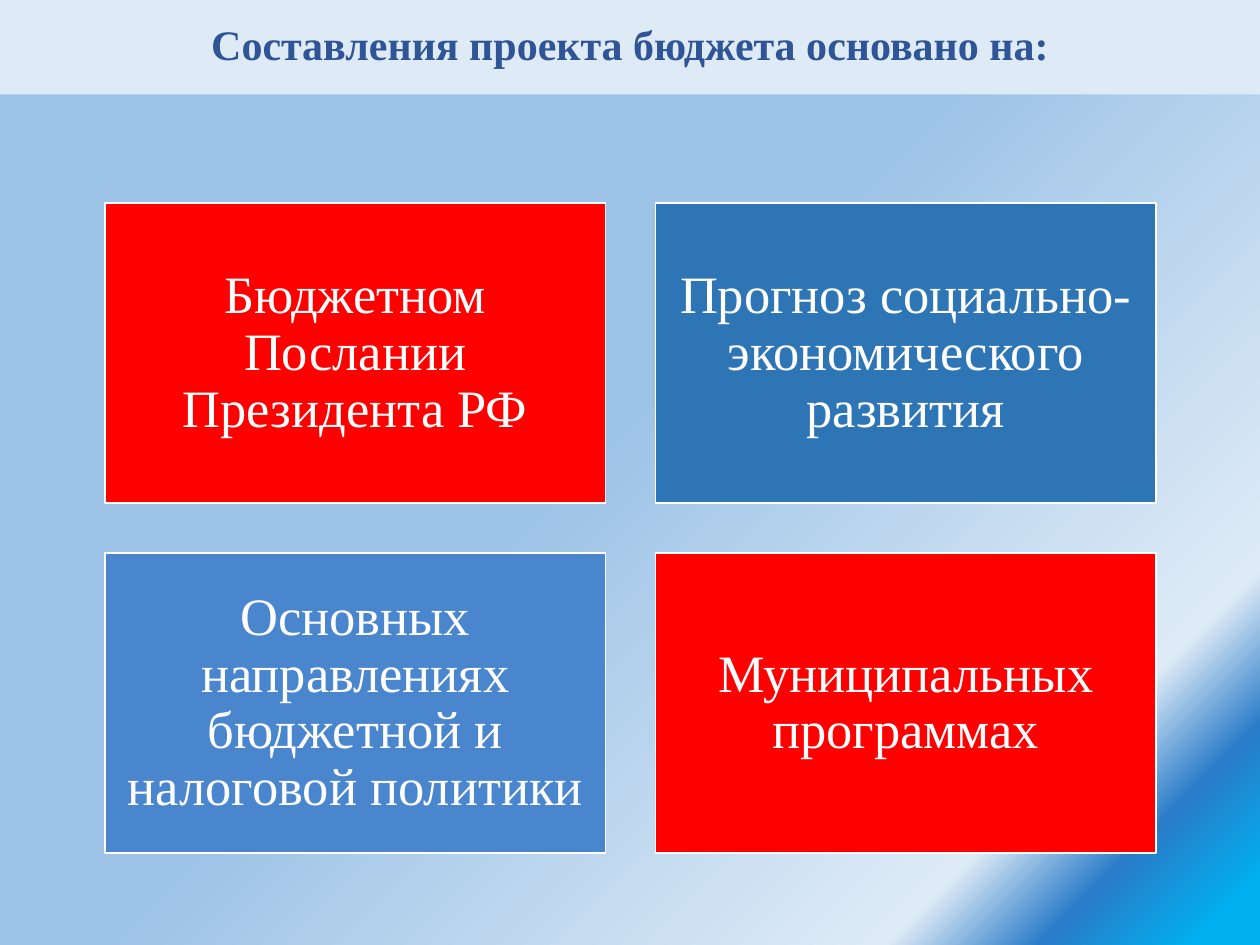
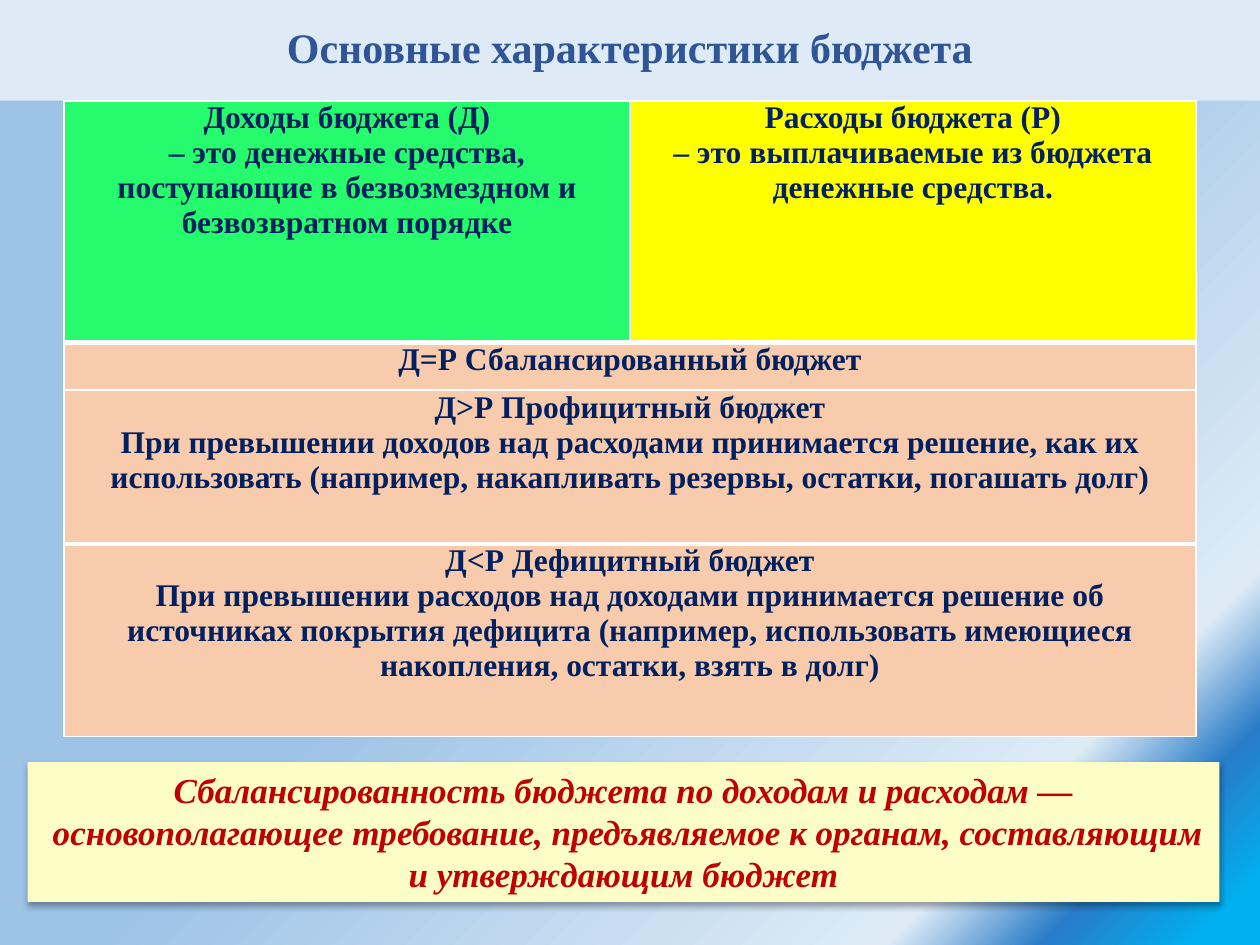
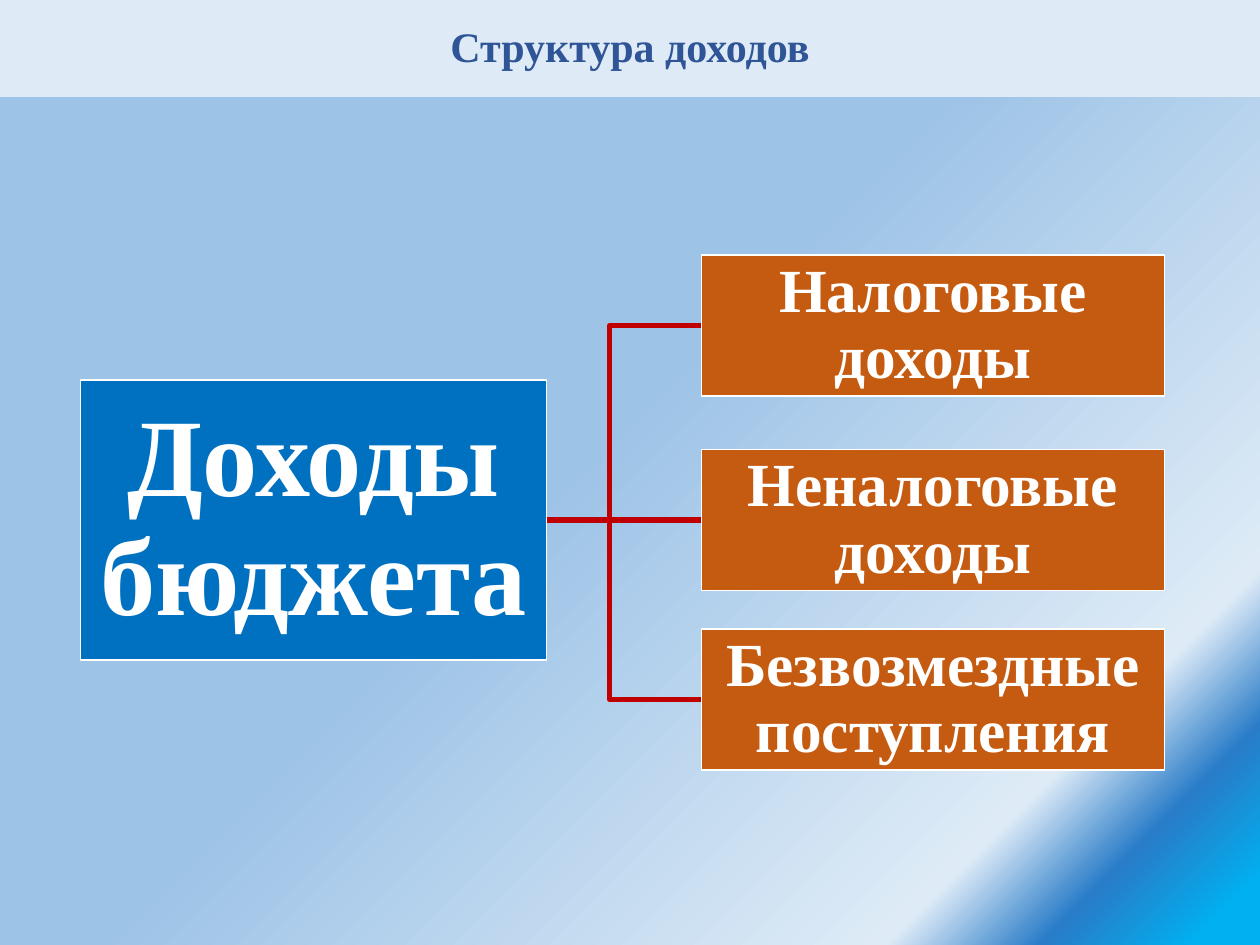
"""Build three slides on how a budget is drafted, balanced and filled."""
import dataclasses
import typing

import pptx
import pptx.dml.color
import pptx.enum.shapes
import pptx.enum.text
import pptx.oxml
import pptx.oxml.ns
import pptx.presentation
import pptx.shapes.autoshape
import pptx.slide
import pptx.table
import pptx.text.text
import pptx.util

Pt = pptx.util.Pt
RGBColor = pptx.dml.color.RGBColor
ANCHOR = pptx.enum.text.MSO_ANCHOR
RECTANGLE = pptx.enum.shapes.MSO_SHAPE.RECTANGLE

FONT = "Times New Roman"
WHITE = RGBColor(0xFF, 0xFF, 0xFF)
BLACK = RGBColor(0x00, 0x00, 0x00)
RED = RGBColor(0xFF, 0x00, 0x00)
DARK_RED = RGBColor(0xC0, 0x00, 0x00)
SKY = RGBColor(0x00, 0xB0, 0xF0)
OCEAN = RGBColor(0x29, 0x7C, 0xC8)
PALE_BLUE = RGBColor(0xDE, 0xEB, 0xF7)
SOFT_BLUE = RGBColor(0x9D, 0xC3, 0xE6)
TITLE_BLUE = RGBColor(0x2F, 0x55, 0x97)
FORECAST_BLUE = RGBColor(0x2E, 0x75, 0xB6)
POLICY_BLUE = RGBColor(0x4A, 0x86, 0xCE)
ROOT_BLUE = RGBColor(0x00, 0x70, 0xC0)
NAVY = RGBColor(0x00, 0x20, 0x60)
GREEN = RGBColor(0x26, 0xFA, 0x6D)
YELLOW = RGBColor(0xFF, 0xFF, 0x00)
PEACH = RGBColor(0xF8, 0xCB, 0xAD)
CREAM = RGBColor(0xFD, 0xFD, 0xC7)
ORANGE = RGBColor(0xC5, 0x5A, 0x11)

SLIDE_WIDTH, SLIDE_HEIGHT = 720, 540
BACKDROP = [(3, SKY), (10, OCEAN), (17, PALE_BLUE), (53, SOFT_BLUE), (96, SOFT_BLUE)]


@dataclasses.dataclass(frozen=True)
class TextStyle:
    """Look of the runs and paragraphs in one block."""
    size: float
    color: RGBColor = WHITE
    bold: bool = True
    italic: bool = False
    spacing: float = 0.9


@dataclasses.dataclass(frozen=True)
class Box:
    """A filled rectangle with centred text, measured in points."""
    left: float
    top: float
    width: float
    height: float
    fill: RGBColor
    paragraphs: tuple[str, ...]
    style: TextStyle
    outline: typing.Optional[RGBColor] = WHITE
    inset_x: float = 7.2
    inset_y: float = 3.6
    anchor: ANCHOR = ANCHOR.MIDDLE


@dataclasses.dataclass(frozen=True)
class BudgetCell:
    """A table cell at a row and column, possibly spanning the row."""
    row: int
    column: int
    fill: RGBColor
    paragraphs: tuple[str, ...]
    spans_row: bool = False


TITLE_STYLE = TextStyle(24, TITLE_BLUE)
BASIS_STYLE = TextStyle(30, bold=False)
CELL_STYLE = TextStyle(18, NAVY, spacing=1.0)
BALANCE_STYLE = TextStyle(20, DARK_RED, italic=True, spacing=1.0)
ROOT_STYLE = TextStyle(63)
BRANCH_STYLE = TextStyle(35)

BASES = [
    ("Бюджетном Послании Президента РФ", RED),
    ("Прогноз социально-экономического развития", FORECAST_BLUE),
    ("Основных направлениях бюджетной и налоговой политики", POLICY_BLUE),
    ("Муниципальных программах", RED),
]
BUDGET_ROWS = [138, 27.4, 87.8, 110.2]
ROW_RULES = [1, 3, 1, 3, 1]
BUDGET_CELLS = [
    BudgetCell(0, 0, GREEN, (
        "Доходы бюджета (Д)",
        "– это денежные средства, поступающие в безвозмездном и безвозвратном порядке")),
    BudgetCell(0, 1, YELLOW, (
        "Расходы бюджета (Р)",
        "– это выплачиваемые из бюджета денежные средства.")),
    BudgetCell(1, 0, PEACH, ("Д=Р Сбалансированный бюджет",), True),
    BudgetCell(2, 0, PEACH, (
        "Д>Р Профицитный бюджет",
        "При превышении доходов над расходами принимается решение, как их использовать "
        "(например, накапливать резервы, остатки, погашать долг)"), True),
    BudgetCell(3, 0, PEACH, (
        "Д<Р Дефицитный бюджет",
        "При превышении расходов над доходами принимается решение об источниках покрытия "
        "дефицита (например, использовать имеющиеся накопления, остатки, взять в долг)"), True),
]
BRANCHES = [
    ("Налоговые доходы", 145.9),
    ("Неналоговые доходы", 256.9),
    ("Безвозмездные поступления", 359.3),
]


def parse_drawing(xml: str) -> typing.Any:
    """Parse a drawing fragment whose root takes the a: namespace."""
    head, rest = xml.split(">", 1)
    closing = "/" if head.endswith("/") else ""
    return pptx.oxml.parse_xml(
        f"{head.rstrip('/')} {pptx.oxml.ns.nsdecls('a')}{closing}>{rest}")


def paint_backdrop(deck: pptx.presentation.Presentation) -> None:
    """Give every slide the radial gradient from the lower right corner."""
    master = deck.slide_master
    master.background.fill.solid()
    properties = master.element.find(f".//{pptx.oxml.ns.qn('p:bgPr')}")
    stops = "".join(
        f'<a:gs pos="{position * 1000}"><a:srgbClr val="{color}"/></a:gs>'
        for position, color in BACKDROP)
    gradient = parse_drawing(
        f'<a:gradFill rotWithShape="1"><a:gsLst>{stops}</a:gsLst><a:path path="circle">'
        '<a:fillToRect l="100000" t="100000"/></a:path></a:gradFill>')
    properties.replace(properties[0], gradient)


def write_text(frame: pptx.text.text.TextFrame, paragraphs: tuple[str, ...],
               style: TextStyle) -> None:
    """Write centred paragraphs in one style."""
    frame.word_wrap = True
    for index, wording in enumerate(paragraphs):
        paragraph = frame.add_paragraph() if index else frame.paragraphs[0]
        paragraph.alignment = pptx.enum.text.PP_ALIGN.CENTER
        paragraph.line_spacing = style.spacing
        run = paragraph.add_run()
        run.text = wording
        run.font.name = FONT
        run.font.size = Pt(style.size)
        run.font.bold = style.bold
        run.font.italic = style.italic
        run.font.color.rgb = style.color


def draw_box(slide: pptx.slide.Slide, box: Box) -> pptx.shapes.autoshape.Shape:
    """Draw one rectangle with its text."""
    shape = slide.shapes.add_shape(
        RECTANGLE, Pt(box.left), Pt(box.top), Pt(box.width), Pt(box.height))
    shape.shadow.inherit = False
    shape.fill.solid()
    shape.fill.fore_color.rgb = box.fill
    if box.outline is None:
        shape.line.fill.background()
    else:
        shape.line.color.rgb = box.outline
        shape.line.width = Pt(1)
    frame = shape.text_frame
    frame.margin_left = frame.margin_right = Pt(box.inset_x)
    frame.margin_top = frame.margin_bottom = Pt(box.inset_y)
    frame.vertical_anchor = box.anchor
    write_text(frame, box.paragraphs, box.style)
    return shape


def add_titled_slide(deck: pptx.presentation.Presentation, title: str,
                     band_height: float) -> pptx.slide.Slide:
    """Add a slide with the title band across its top."""
    slide = deck.slides.add_slide(deck.slide_layouts[6])
    draw_box(slide, Box(0, 0, SLIDE_WIDTH, band_height, PALE_BLUE, (title,),
                        TITLE_STYLE, outline=None))
    return slide


def rule_cell(cell: pptx.table._Cell, row: int) -> None:
    """Draw the white borders of a cell in the given row."""
    properties = cell._tc.get_or_add_tcPr()
    widths = {"L": 1, "R": 1, "T": ROW_RULES[row], "B": ROW_RULES[row + 1]}
    for side, width in widths.items():
        properties.append(parse_drawing(
            f'<a:ln{side} w="{Pt(width)}"><a:solidFill><a:srgbClr val="{WHITE}"/>'
            f'</a:solidFill></a:ln{side}>'))


def draw_budget_table(slide: pptx.slide.Slide) -> None:
    """Draw the table of income, spending and the three balances."""
    column_width = 323.4
    budget = slide.shapes.add_table(
        len(BUDGET_ROWS), 2, Pt(36.6), Pt(57.6),
        Pt(2 * column_width), Pt(sum(BUDGET_ROWS))).table
    budget.first_row = budget.horz_banding = False
    for column in budget.columns:
        column.width = Pt(column_width)
    for index, height in enumerate(BUDGET_ROWS):
        budget.rows[index].height = Pt(height)
        for cell in budget.rows[index].cells:
            rule_cell(cell, index)
    for entry in BUDGET_CELLS:
        cell = budget.cell(entry.row, entry.column)
        if entry.spans_row:
            cell.merge(budget.cell(entry.row, 1))
        cell.fill.solid()
        cell.fill.fore_color.rgb = entry.fill
        cell.margin_left = cell.margin_right = Pt(5)
        cell.margin_top = cell.margin_bottom = Pt(0)
        write_text(cell.text_frame, entry.paragraphs, CELL_STYLE)


def cast_shadow(shape: pptx.shapes.autoshape.Shape) -> None:
    """Put a soft shadow below a shape."""
    effects = shape._element.spPr.find(pptx.oxml.ns.qn("a:effectLst"))
    effects.append(parse_drawing(
        f'<a:outerShdw blurRad="{Pt(3.5)}" dist="{Pt(2.2)}" dir="5400000" rotWithShape="0">'
        f'<a:srgbClr val="{BLACK}"><a:alpha val="32000"/></a:srgbClr></a:outerShdw>'))


def draw_link(slide: pptx.slide.Slide, root: pptx.shapes.autoshape.Shape,
              branch: pptx.shapes.autoshape.Shape) -> None:
    """Link the root to a branch, straight when level, else by a spine."""
    start = (root.left + root.width, root.top + root.height // 2)
    end = (branch.left, branch.top + branch.height // 2)
    if abs(start[1] - end[1]) < Pt(1):
        link = slide.shapes.add_connector(
            pptx.enum.shapes.MSO_CONNECTOR.STRAIGHT, *start, *end)
        link.begin_connect(root, 3)
        link.end_connect(branch, 1)
        link._element.spPr.append(parse_drawing("<a:effectLst/>"))
    else:
        spine = Pt(348.3)
        outline = slide.shapes.build_freeform(*start)
        outline.add_line_segments([(spine, start[1]), (spine, end[1]), end], close=False)
        link = outline.convert_to_shape()
        link.fill.background()
        link.shadow.inherit = False
    link.line.color.rgb = DARK_RED
    link.line.width = Pt(3)


def build_bases(deck: pptx.presentation.Presentation) -> None:
    """Build the slide on what the draft budget rests on."""
    slide = add_titled_slide(deck, "Составления проекта бюджета основано на:", 54)
    width, height, gap = 286, 171.4, 28.6
    for index, (basis, fill) in enumerate(BASES):
        row, column = divmod(index, 2)
        draw_box(slide, Box(60 + column * (width + gap), 116.2 + row * (height + gap),
                            width, height, fill, (basis,), BASIS_STYLE,
                            inset_x=8.6, inset_y=8.6))


def build_characteristics(deck: pptx.presentation.Presentation) -> None:
    """Build the slide on income, spending and balance."""
    slide = add_titled_slide(deck, "Основные характеристики бюджета", 57.6)
    draw_budget_table(slide)
    balance = draw_box(slide, Box(15.8, 435.5, 681, 80, CREAM, (
        "Сбалансированность бюджета по доходам и расходам —",
        " основополагающее требование, предъявляемое к органам, "
        "составляющим и утверждающим бюджет"),
        BALANCE_STYLE, outline=None, anchor=ANCHOR.TOP))
    cast_shadow(balance)


def build_income(deck: pptx.presentation.Presentation) -> None:
    """Build the slide on the structure of income."""
    slide = add_titled_slide(deck, "Структура доходов", 55.4)
    income = draw_box(slide, Box(46, 217.2, 266.4, 160, ROOT_BLUE, ("Доходы бюджета",),
                                 ROOT_STYLE, inset_x=2.9, inset_y=2.9))
    for source, top in BRANCHES:
        branch = draw_box(slide, Box(400.8, top, 264.6, 80.6, ORANGE, (source,),
                                     BRANCH_STYLE, inset_x=1.6, inset_y=1.6))
        draw_link(slide, income, branch)


def main() -> None:
    """Build and save the deck."""
    deck = pptx.Presentation()
    deck.slide_width, deck.slide_height = Pt(SLIDE_WIDTH), Pt(SLIDE_HEIGHT)
    paint_backdrop(deck)
    build_bases(deck)
    build_characteristics(deck)
    build_income(deck)
    deck.save("out.pptx")


if __name__ == "__main__":
    main()
